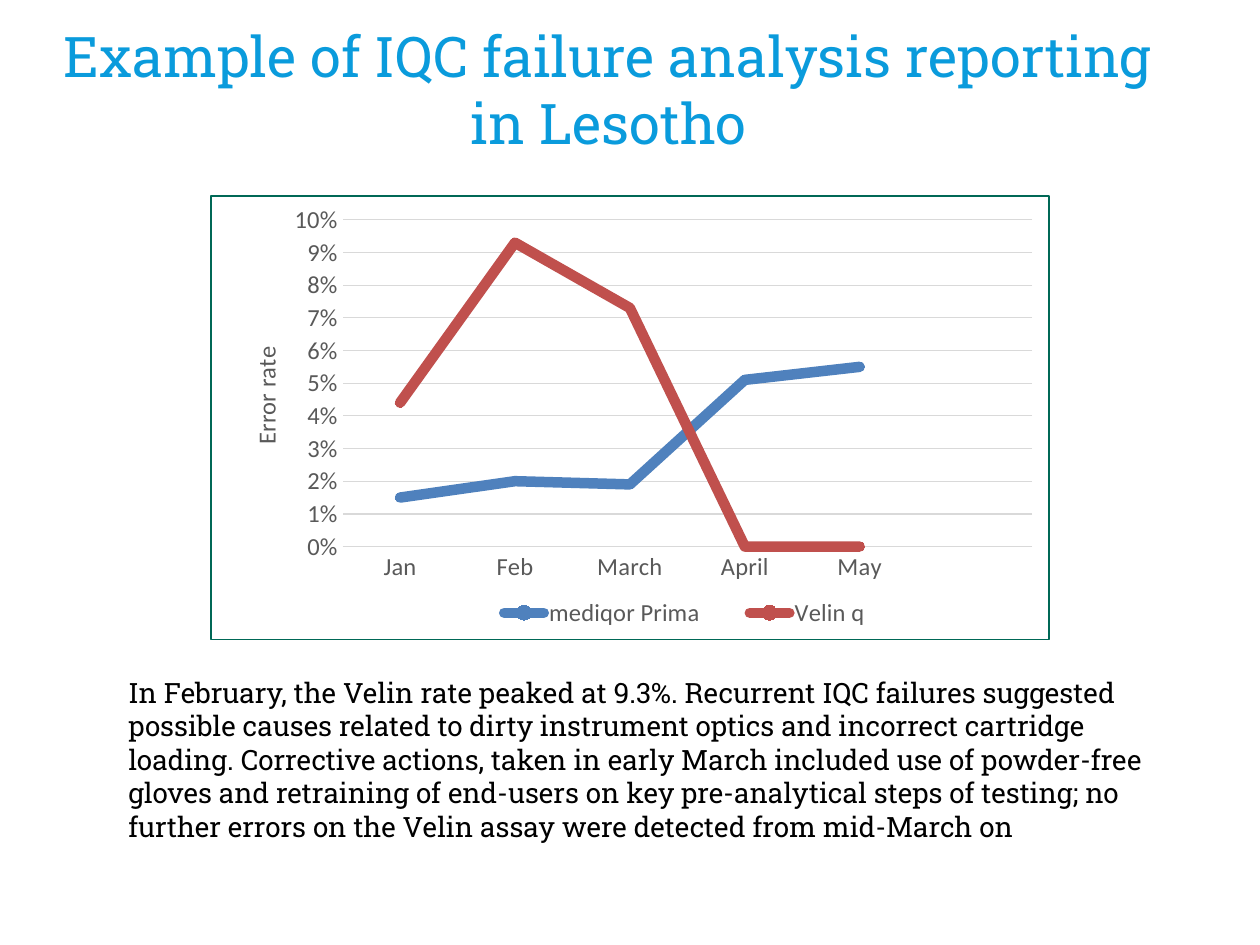
from lxml import etree
from pptx import Presentation
from pptx import util as u
from pptx.chart.data import CategoryChartData
from pptx.dml.color import RGBColor
from pptx.enum import chart as ec, text
from pptx.oxml import parse_xml
from pptx.oxml.ns import nsdecls, qn

BLUE = RGBColor(0x0A, 0x9B, 0xDC)
BLACK = RGBColor(0, 0, 0)
GRAY = RGBColor(0x59, 0x59, 0x59)
GRID = RGBColor(0xD9, 0xD9, 0xD9)
SERIES_BLUE = RGBColor(0x4F, 0x81, 0xBD)
SERIES_RED = RGBColor(0xC0, 0x50, 0x4D)
GREEN = RGBColor(0x00, 0x68, 0x56)

MONTHS = ["Jan", "Feb", "March", "April", "May", ""]
ERROR_RATES = [
    ("mediqor Prima", [0.015, 0.02, 0.019, 0.051, 0.055, None], SERIES_BLUE),
    ("Velin q", [0.044, 0.093, 0.073, 0, 0, None], SERIES_RED),
]


class Deck:
    body_font = "Roboto Slab"
    chart_font = "Calibri"
    chart_size = u.Pt(14)

    def __init__(self):
        self.prs = Presentation()
        self.prs.slide_width = u.Inches(10)
        self.prs.slide_height = u.Inches(7.5)
        self.s = self.prs.slides.add_slide(self.prs.slide_layouts[6])

    def text(self, box, content, size, color, align, anchor):
        sp = self.s.shapes.add_textbox(*map(u.Inches, box))
        tf = sp.text_frame
        tf.word_wrap = True
        tf.vertical_anchor = anchor
        tf.text = content
        p = tf.paragraphs[0]
        p.alignment = align
        self.style(p.runs[0].font, self.body_font, u.Pt(size), color)

    def style(self, font, name, size, color):
        font.name = name
        font.size = size
        font.bold = False
        font.color.rgb = color

    def chart_text(self, font):
        self.style(font, self.chart_font, self.chart_size, GRAY)

    def layout(self, parent, index, x, y, w=None, h=None, inner=False):
        for old in parent.findall(qn("c:layout")):
            parent.remove(old)
        layout = parse_xml(f"<c:layout {nsdecls('c')}><c:manualLayout/></c:layout>")
        values = [("xMode", "edge"), ("yMode", "edge"), ("x", x), ("y", y), ("w", w), ("h", h)]
        if inner:
            values.insert(0, ("layoutTarget", "inner"))
        for tag, value in values:
            if value is not None:
                etree.SubElement(layout[0], qn(f"c:{tag}")).set("val", str(value))
        parent.insert(index, layout)

    def border(self, chart, color):
        chart.element.find(qn("c:chart")).addnext(parse_xml(
            f"<c:spPr {nsdecls('c', 'a')}><a:noFill/><a:ln w='9525'><a:solidFill>"
            f"<a:srgbClr val='{color}'/></a:solidFill></a:ln></c:spPr>"))

    def line_chart(self, box, categories, series, axis_title):
        data = CategoryChartData(number_format="0.0%")
        data.categories = categories
        for name, values, _ in series:
            data.add_series(name, values)
        frame = self.s.shapes.add_chart(
            ec.XL_CHART_TYPE.LINE_MARKERS, *map(u.Inches, box), data)
        chart = frame.chart
        chart.has_title = False
        self.style(chart.font, self.chart_font, self.chart_size, BLACK)
        self.border(chart, GREEN)
        chart.plots[0].vary_by_categories = False
        for ser, (_, _, color) in zip(chart.plots[0].series, series):
            self.series(ser, color)
        self.axes(chart, axis_title)
        chart.has_legend = True
        chart.legend.position = ec.XL_LEGEND_POSITION.BOTTOM
        chart.legend.include_in_layout = False
        self.chart_text(chart.legend.font)
        root = chart.element
        self.layout(root.find(".//" + qn("c:plotArea")), 0, 0.157, 0.054, 0.823, 0.737, True)
        self.layout(root.find(".//" + qn("c:legend")), 1, 0.3, 0.9, 0.53, 0.08)

    def series(self, ser, color):
        ser.smooth = False
        ser.format.line.color.rgb = color
        ser.format.line.width = u.Pt(6)
        ser.marker.style = ec.XL_MARKER_STYLE.CIRCLE
        ser.marker.size = 5
        ser.marker.format.fill.solid()
        ser.marker.format.fill.fore_color.rgb = color
        ser.marker.format.line.color.rgb = color
        for ln in ser.format.line._ln.iter(qn("a:ln")):
            ln.set("cap", "rnd")

    def axes(self, chart, axis_title):
        cat, val = chart.category_axis, chart.value_axis
        for axis in (cat, val):
            axis.major_tick_mark = axis.minor_tick_mark = ec.XL_TICK_MARK.NONE
            self.chart_text(axis.tick_labels.font)
        val.minimum_scale, val.maximum_scale, val.major_unit = 0, 0.1, 0.01
        val.tick_labels.number_format = "0%"
        val.tick_labels.number_format_is_linked = False
        val.format.line.fill.background()
        for line in (cat.format.line, val.major_gridlines.format.line):
            line.color.rgb = GRID
            line.width = u.Pt(0.75)
        tf = val.axis_title.text_frame
        tf.text = axis_title
        self.chart_text(tf.paragraphs[0].runs[0].font)
        title = chart.element.find(".//" + qn("c:valAx")).find(qn("c:title"))
        title.find(".//" + qn("a:bodyPr")).set("rot", "-5400000")
        self.layout(title, 1, 0.04, 0.33)


def main():
    deck = Deck()
    deck.text((0.33, 0.08, 9, 1.25), "Example of IQC failure analysis reporting in Lesotho",
              32, BLUE, text.PP_ALIGN.CENTER, text.MSO_ANCHOR.MIDDLE)
    deck.line_chart((1.67, 1.55, 6.66, 3.53), MONTHS, ERROR_RATES, "Error rate")
    deck.text((0.92, 5.31, 8.67, 1.45),
              "In February, the Velin rate peaked at 9.3%. Recurrent IQC failures suggested "
              "possible causes related to dirty instrument optics and incorrect cartridge "
              "loading. Corrective actions, taken in early March included use of powder-free "
              "gloves and retraining of end-users on key pre-analytical steps of testing; no "
              "further errors on the Velin assay were detected from mid-March on",
              16, BLACK, text.PP_ALIGN.LEFT, text.MSO_ANCHOR.TOP)
    deck.prs.save("out.pptx")


if __name__ == "__main__":
    main()
